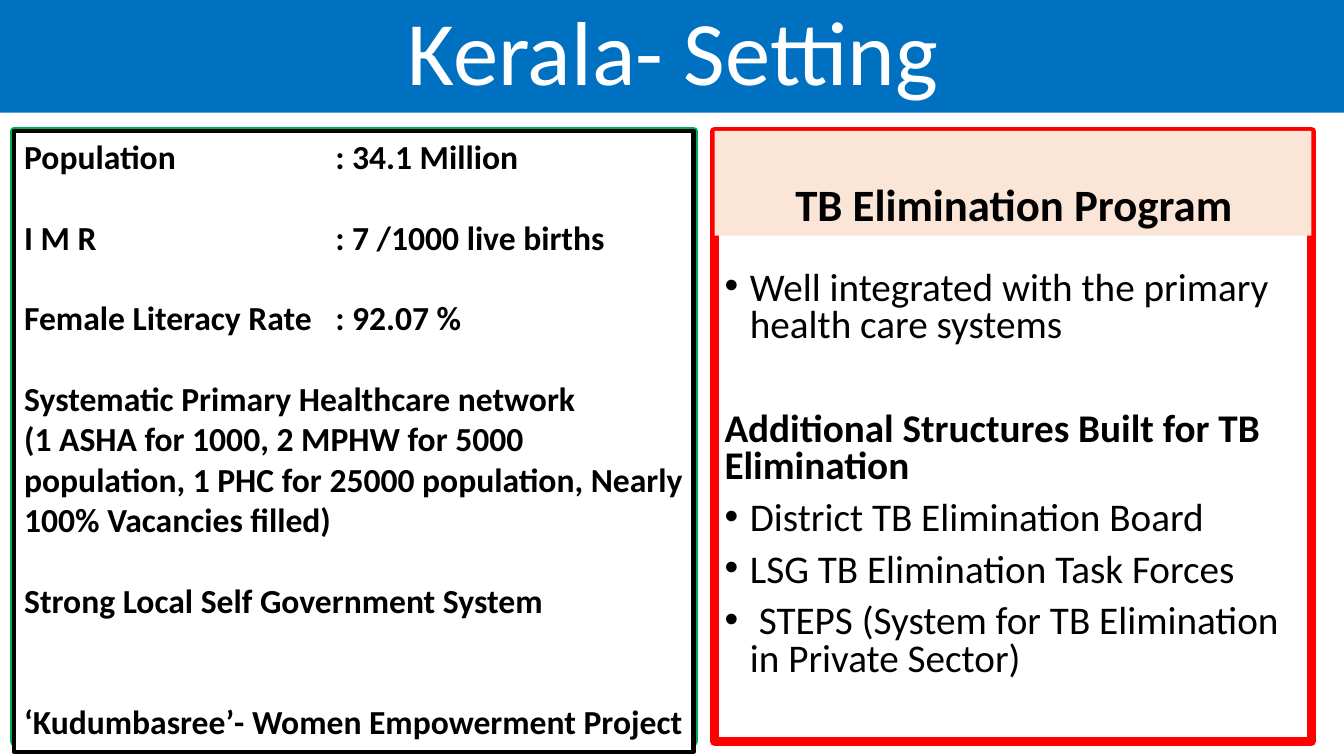
from lxml import etree
from pptx import Presentation
from pptx.dml.color import RGBColor
from pptx.enum.shapes import MSO_SHAPE
from pptx.enum.text import MSO_ANCHOR, PP_ALIGN
from pptx.oxml.ns import qn
from pptx.util import Cm, Pt

RECTANGLE = MSO_SHAPE.RECTANGLE
TOP, MIDDLE = MSO_ANCHOR.TOP, MSO_ANCHOR.MIDDLE
LEFT, CENTER = PP_ALIGN.LEFT, PP_ALIGN.CENTER

COLORS = {
    "blue": "0070C0",
    "green": "00B050",
    "pale green": "C5E0B4",
    "red": "FF0000",
    "peach": "FBE5D6",
    "white": "FFFFFF",
    "black": "000000",
}
PANEL_TOP = 3.3
PANEL_HEIGHT = 15.39
FACTS_LEFT, FACTS_WIDTH = 0.36, 17.12
PROGRAM_LEFT, PROGRAM_WIDTH = 18.01, 15.04
LINE_GAP = 28.8

FACTS = [
    ("Population\t: 34.1 Million", 0),
    ("I M R\t: 7 /1000 live births", LINE_GAP),
    ("Female Literacy Rate\t: 92.07 %", LINE_GAP),
    ("Systematic Primary Healthcare network\n(1 ASHA for 1000, 2 MPHW for 5000 population, "
     "1 PHC for 25000 population, Nearly 100% Vacancies filled)", LINE_GAP),
    ("Strong Local Self Government System", LINE_GAP),
    ("‘Kudumbasree’- Women Empowerment Project", 2 * LINE_GAP),
]
PROGRAM = [
    ("Well integrated with the primary health care systems", 0, True),
    ("Additional Structures Built for TB Elimination", 47, False),
    ("District TB Elimination Board", 10, True),
    ("LSG TB Elimination Task Forces", 10, True),
    (" STEPS (System for TB Elimination in Private Sector)", 10, True),
]


class SlideBuilder:
    """Holds the text style and current page, and adds boxes and paragraphs."""

    def __init__(self, page, font="Calibri"):
        self.page = page
        self.font = font

    def color(self, name):
        return RGBColor.from_string(COLORS[name])

    def box(self, left, top, width, height, fill=None, line=None, weight=0,
            anchor=TOP, inset_top=0.13):
        box = self.page.shapes.add_shape(
            RECTANGLE, Cm(left), Cm(top), Cm(width), Cm(height))
        box.shadow.inherit = False
        if fill:
            box.fill.solid()
            box.fill.fore_color.rgb = self.color(fill)
        else:
            box.fill.background()
        if line:
            box.line.color.rgb = self.color(line)
            box.line.width = Pt(weight)
        else:
            box.line.fill.background()
        frame = box.text_frame
        frame.word_wrap = True
        frame.vertical_anchor = anchor
        frame.margin_top = Cm(inset_top)
        frame.margin_right = Cm(0.2)
        return box

    def para(self, box, text, size, color="black", bold=False, align=LEFT,
             spacing=1.0, before=0):
        frame = box.text_frame
        para = frame.paragraphs[0]
        if para.runs:
            para = frame.add_paragraph()
        para.alignment = align
        para.line_spacing = spacing
        para.space_before = Pt(before)
        for index, line in enumerate(text.split("\n")):
            if index:
                para.add_line_break()
            span = para.add_run()
            span.text = line
            span.font.name = self.font
            span.font.size = Pt(size)
            span.font.bold = bold
            span.font.color.rgb = self.color(color)
        return para

    def bullet(self, para, indent=0.64):
        properties = para._p.get_or_add_pPr()
        properties.set("marL", str(Cm(indent)))
        properties.set("indent", str(-Cm(indent)))
        etree.SubElement(properties, qn("a:buFont")).set("typeface", "Arial")
        etree.SubElement(properties, qn("a:buChar")).set("char", "•")

    def tab_stop(self, para, position):
        stops = etree.SubElement(para._p.get_or_add_pPr(), qn("a:tabLst"))
        stop = etree.SubElement(stops, qn("a:tab"))
        stop.set("pos", str(Cm(position)))
        stop.set("algn", "l")


def main():
    deck = Presentation()
    deck.slide_width, deck.slide_height = Cm(33.87), Cm(19.05)
    builder = SlideBuilder(deck.slides.add_slide(deck.slide_layouts[6]))

    title = builder.box(0, 0, 33.87, 2.84, fill="blue", anchor=MIDDLE)
    builder.para(title, "Kerala- Setting", 64.8, "white", align=CENTER, spacing=0.9)

    builder.box(FACTS_LEFT, PANEL_TOP, FACTS_WIDTH, PANEL_HEIGHT,
                fill="pale green", line="green", weight=6)

    program = builder.box(PROGRAM_LEFT, PANEL_TOP, PROGRAM_WIDTH, PANEL_HEIGHT,
                          line="red", weight=6, inset_top=3.53)
    for text, before, bulleted in PROGRAM:
        para = builder.para(program, text, 28, bold=not bulleted,
                            spacing=0.8, before=before)
        if bulleted:
            builder.bullet(para)

    facts = builder.box(FACTS_LEFT, PANEL_TOP, FACTS_WIDTH, 15.65,
                        fill="white", line="black", weight=3)
    for text, before in FACTS:
        para = builder.para(facts, text, 24, bold=True, before=before)
        if "\t" in text:
            builder.tab_stop(para, 7.84)

    header = builder.box(PROGRAM_LEFT, PANEL_TOP, PROGRAM_WIDTH, 2.64,
                         fill="peach", inset_top=1.15)
    builder.para(header, "TB Elimination Program", 32, bold=True, align=CENTER)

    deck.save("out.pptx")


if __name__ == "__main__":
    main()
